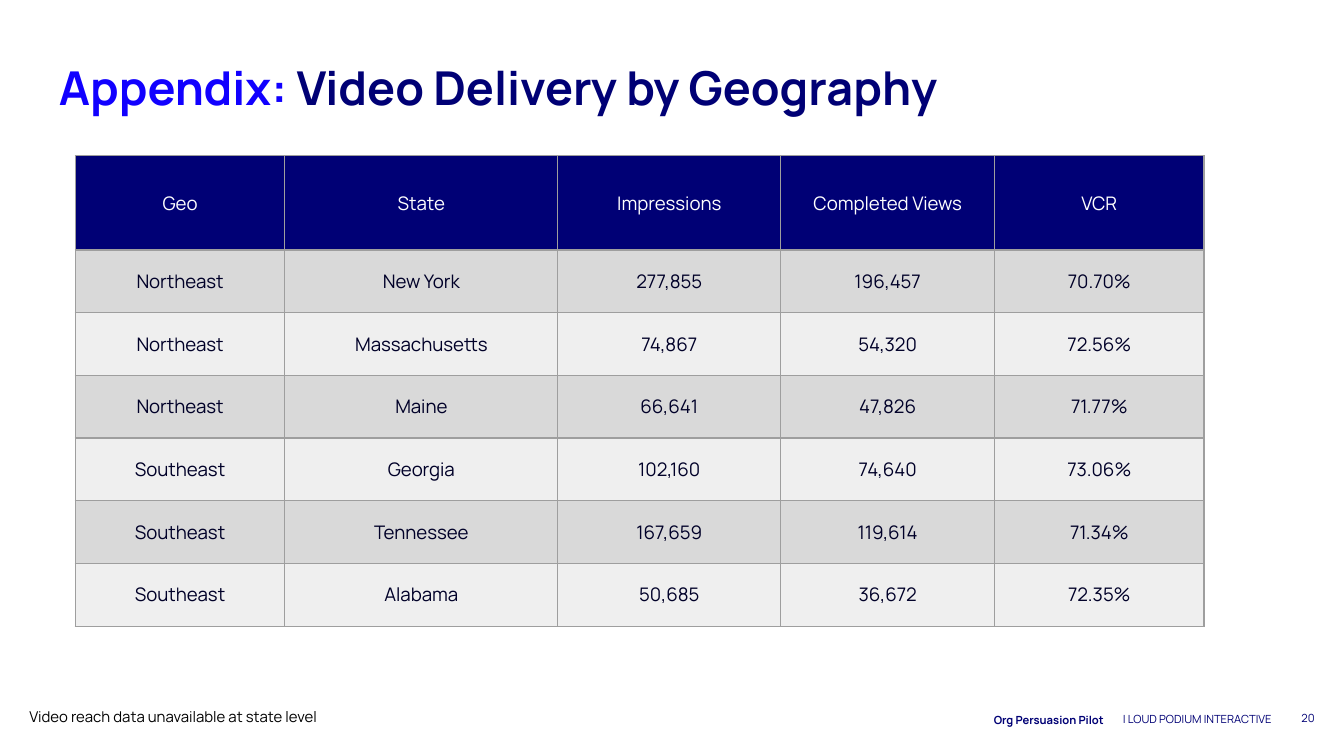
from lxml.etree import SubElement
from pptx import Presentation
from pptx.dml.color import RGBColor
from pptx.enum.text import MSO_ANCHOR, PP_ALIGN
from pptx.oxml.ns import qn
from pptx.util import Inches, Pt

NAVY = "000075"
BLUE = "1100FF"
INK = "000028"
WHITE = "FFFFFF"
BLACK = "000000"
BORDER = "9E9E9E"
BANDS = ("D9D9D9", "EFEFEF")


def rgb(value):
    return RGBColor.from_string(value)


class SlideBuilder:
    font = "Manrope"

    def __init__(self, slide):
        self.slide = slide

    def add_run(self, paragraph, text, size, color, bold=False):
        run = paragraph.add_run()
        run.text = text
        run.font.name = self.font
        run.font.size = Pt(size)
        run.font.bold = bold
        run.font.color.rgb = rgb(color)

    def text(self, box, runs, size, align=PP_ALIGN.LEFT, anchor=MSO_ANCHOR.TOP,
             insets=(0.1, 0.1), bold=False, line_spacing=None):
        frame = self.slide.shapes.add_textbox(*map(Inches, box)).text_frame
        frame.word_wrap = True
        frame.vertical_anchor = anchor
        frame.margin_left = frame.margin_right = Inches(insets[0])
        frame.margin_top = frame.margin_bottom = Inches(insets[1])
        paragraph = frame.paragraphs[0]
        paragraph.alignment = align
        paragraph.line_spacing = line_spacing
        for text, color in runs:
            self.add_run(paragraph, text, size, color, bold)

    def border(self, cell):
        properties = cell._tc.get_or_add_tcPr()
        for position, side in enumerate(("a:lnL", "a:lnR", "a:lnT", "a:lnB")):
            line = properties.makeelement(qn(side), {"w": str(Pt(0.75))})
            fill = SubElement(line, qn("a:solidFill"))
            SubElement(fill, qn("a:srgbClr"), val=BORDER)
            properties.insert(position, line)

    def cell(self, cell, text, size, color, fill):
        cell.fill.solid()
        cell.fill.fore_color.rgb = rgb(fill)
        cell.vertical_anchor = MSO_ANCHOR.MIDDLE
        cell.margin_left = cell.margin_right = Inches(0.1)
        cell.margin_top = cell.margin_bottom = Inches(0.1)
        paragraph = cell.text_frame.paragraphs[0]
        paragraph.alignment = PP_ALIGN.CENTER
        self.add_run(paragraph, text, size, color)
        self.border(cell)

    def table(self, left, top, widths, heights, rows, size):
        box = (left, top, sum(widths), sum(heights))
        table = self.slide.shapes.add_table(
            len(rows), len(widths), *map(Inches, box)).table
        for column, width in zip(table.columns, widths):
            column.width = Inches(width)
        for row, height in zip(table.rows, heights):
            row.height = Inches(height)
        for r, values in enumerate(rows):
            color, fill = (INK, BANDS[(r - 1) % 2]) if r else (WHITE, NAVY)
            for c, value in enumerate(values):
                self.cell(table.cell(r, c), value, size, color, fill)


def main():
    presentation = Presentation()
    presentation.slide_width = Inches(10)
    presentation.slide_height = Inches(10) * 9 // 16
    slide = presentation.slides.add_slide(presentation.slide_layouts[6])
    builder = SlideBuilder(slide)

    builder.text((7.15, 5.26, 2.38, 0.18), [("| LOUD PODIUM INTERACTIVE", NAVY)], 6,
                 PP_ALIGN.RIGHT, insets=(0.07, 0.04))
    builder.text((9.28, 5.13, 0.6, 0.43), [("20", NAVY)], 6,
                 PP_ALIGN.RIGHT, MSO_ANCHOR.MIDDLE)
    builder.text((1.22, 5.26, 7.09, 0.18), [("Org Persuasion Pilot", NAVY)], 6,
                 PP_ALIGN.RIGHT, MSO_ANCHOR.MIDDLE, bold=True, line_spacing=1.15)
    builder.text((0.34, 0.34, 9.07, 0.56),
                 [("Appendix: ", BLUE), ("Video Delivery by Geography", NAVY)],
                 25, bold=True)

    delivery = [
        ("Geo", "State", "Impressions", "Completed Views", "VCR"),
        ("Northeast", "New York", "277,855", "196,457", "70.70%"),
        ("Northeast", "Massachusetts", "74,867", "54,320", "72.56%"),
        ("Northeast", "Maine", "66,641", "47,826", "71.77%"),
        ("Southeast", "Georgia", "102,160", "74,640", "73.06%"),
        ("Southeast", "Tennessee", "167,659", "119,614", "71.34%"),
        ("Southeast", "Alabama", "50,685", "36,672", "72.35%"),
    ]
    header_height = 0.7
    state_count = len(delivery) - 1
    state_height = (3.5 - header_height) / state_count
    heights = [header_height] + [state_height] * state_count
    builder.table(0.56, 1.16, [1.56, 2.03, 1.66, 1.59, 1.56], heights, delivery, 10)

    builder.text((0.12, 5.2, 6.26, 0.34),
                 [("Video reach data unavailable at state level", BLACK)], 8)
    presentation.save("out.pptx")


if __name__ == "__main__":
    main()
